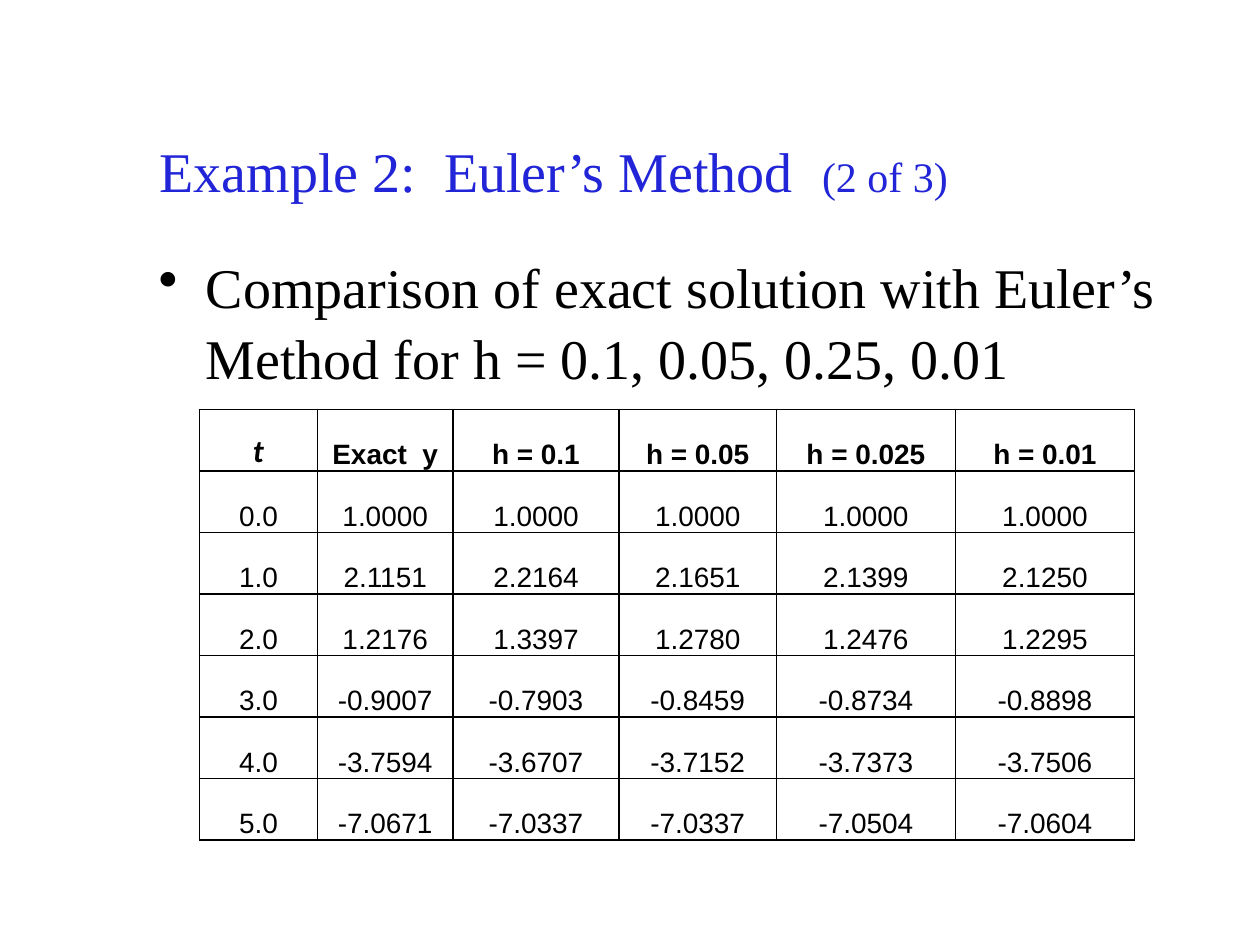
from lxml import etree
from pptx import Presentation
from pptx import util as u
from pptx.dml.color import RGBColor
from pptx.enum import text
from pptx.oxml import ns

BLUE, BLACK = "2125D7", "000000"
SERIF, SANS = "Times New Roman", "Arial"

TITLE = [("Example 2:  Euler’s Method  ", 32), ("(2 of 3)", 24)]
BULLET = "Comparison of exact solution with Euler’s Method for h = 0.1, 0.05, 0.25, 0.01"
HEADINGS = ("t", "Exact  y", "h = 0.1", "h = 0.05", "h = 0.025", "h = 0.01")
SOLUTIONS = [
    ("0.0", "1.0000", "1.0000", "1.0000", "1.0000", "1.0000"),
    ("1.0", "2.1151", "2.2164", "2.1651", "2.1399", "2.1250"),
    ("2.0", "1.2176", "1.3397", "1.2780", "1.2476", "1.2295"),
    ("3.0", "-0.9007", "-0.7903", "-0.8459", "-0.8734", "-0.8898"),
    ("4.0", "-3.7594", "-3.6707", "-3.7152", "-3.7373", "-3.7506"),
    ("5.0", "-7.0671", "-7.0337", "-7.0337", "-7.0504", "-7.0604"),
]
COLUMN_WIDTHS = (2.38, 2.73, 3.35, 3.17, 3.61, 3.61)
ROW_HEIGHT = 1.24


def add_run(paragraph, words, size, font, color, bold=False, italic=False):
    run = paragraph.add_run()
    run.text = words
    run.font.size = u.Pt(size)
    run.font.name = font
    run.font.color.rgb = RGBColor.from_string(color)
    run.font.bold = bold
    run.font.italic = italic


def add_frame(slide, left, top, width, height, anchor):
    frame = slide.shapes.add_textbox(*map(u.Cm, (left, top, width, height))).text_frame
    frame.word_wrap = True
    frame.vertical_anchor = anchor
    return frame


def add_bullet(paragraph, indent):
    """Give the paragraph a round bullet with a hanging indent."""
    props = paragraph._p.get_or_add_pPr()
    props.set("marL", str(u.Cm(indent)))
    props.set("indent", str(-u.Cm(indent)))
    etree.SubElement(props, ns.qn("a:buChar")).set("char", "•")


def add_borders(cell, color, width):
    props = cell._tc.get_or_add_tcPr()
    for place, side in enumerate(("lnL", "lnR", "lnT", "lnB")):
        line = etree.Element(ns.qn(f"a:{side}"), w=str(u.Pt(width)))
        fill = etree.SubElement(line, ns.qn("a:solidFill"))
        etree.SubElement(fill, ns.qn("a:srgbClr")).set("val", color)
        props.insert(place, line)


def fill_cell(cell, words, **style):
    cell.fill.background()
    add_borders(cell, BLACK, 1)
    cell.vertical_anchor = text.MSO_ANCHOR.BOTTOM
    cell.margin_left = cell.margin_right = u.Cm(0.18)
    cell.margin_top = cell.margin_bottom = 0
    paragraph = cell.text_frame.paragraphs[0]
    paragraph.alignment = text.PP_ALIGN.CENTER
    paragraph.line_spacing = 1.15
    add_run(paragraph, words, color=BLACK, **style)


def add_solution_table(slide, left, top):
    rows = [HEADINGS] + SOLUTIONS
    table = slide.shapes.add_table(
        len(rows), len(HEADINGS), u.Cm(left), u.Cm(top),
        u.Cm(sum(COLUMN_WIDTHS)), u.Cm(ROW_HEIGHT * len(rows))).table
    table.horz_banding = False
    for column, width in zip(table.columns, COLUMN_WIDTHS):
        column.width = u.Cm(width)
    for r, values in enumerate(rows):
        table.rows[r].height = u.Cm(ROW_HEIGHT)
        for c, value in enumerate(values):
            style = dict(size=16, font=SANS, bold=r == 0)
            if r == c == 0:
                style.update(size=18, font="Calibri", italic=True)
            fill_cell(table.cell(r, c), value, **style)


def main():
    deck = Presentation()
    deck.slide_width, deck.slide_height = u.Cm(25.4), u.Cm(19.05)
    slide = deck.slides.add_slide(deck.slide_layouts[6])

    title = add_frame(slide, 2.97, 1.07, 21.59, 3.17, text.MSO_ANCHOR.BOTTOM)
    for words, size in TITLE:
        add_run(title.paragraphs[0], words, size, SERIF, BLUE)

    body = add_frame(slide, 2.95, 4.9, 21.59, 12.45, text.MSO_ANCHOR.TOP)
    comparison = body.paragraphs[0]
    add_bullet(comparison, 0.95)
    comparison.line_spacing = 1.05
    add_run(comparison, BULLET, 32, SERIF, BLACK)

    add_solution_table(slide, 4.02, 8.25)
    deck.save("out.pptx")


if __name__ == "__main__":
    main()
